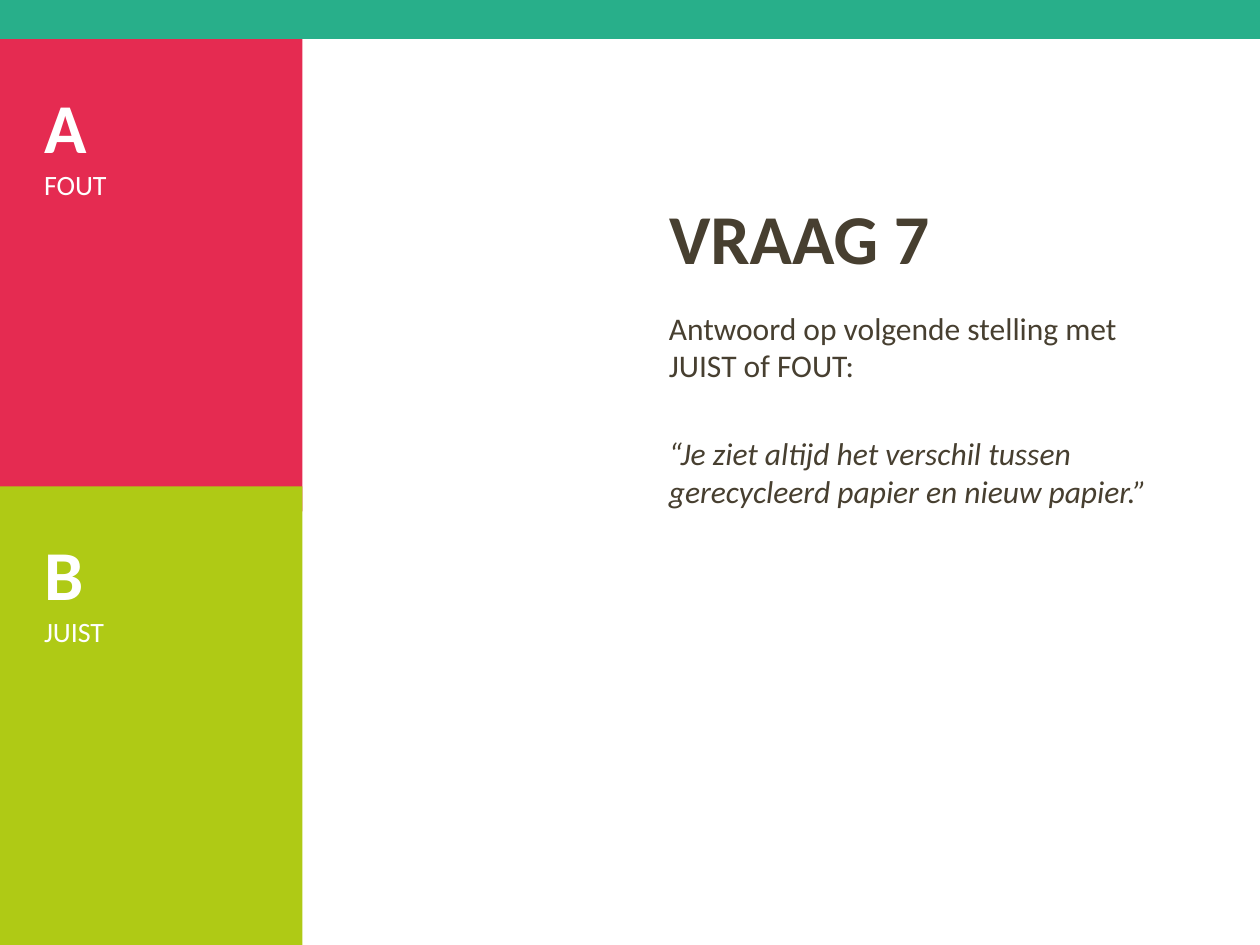
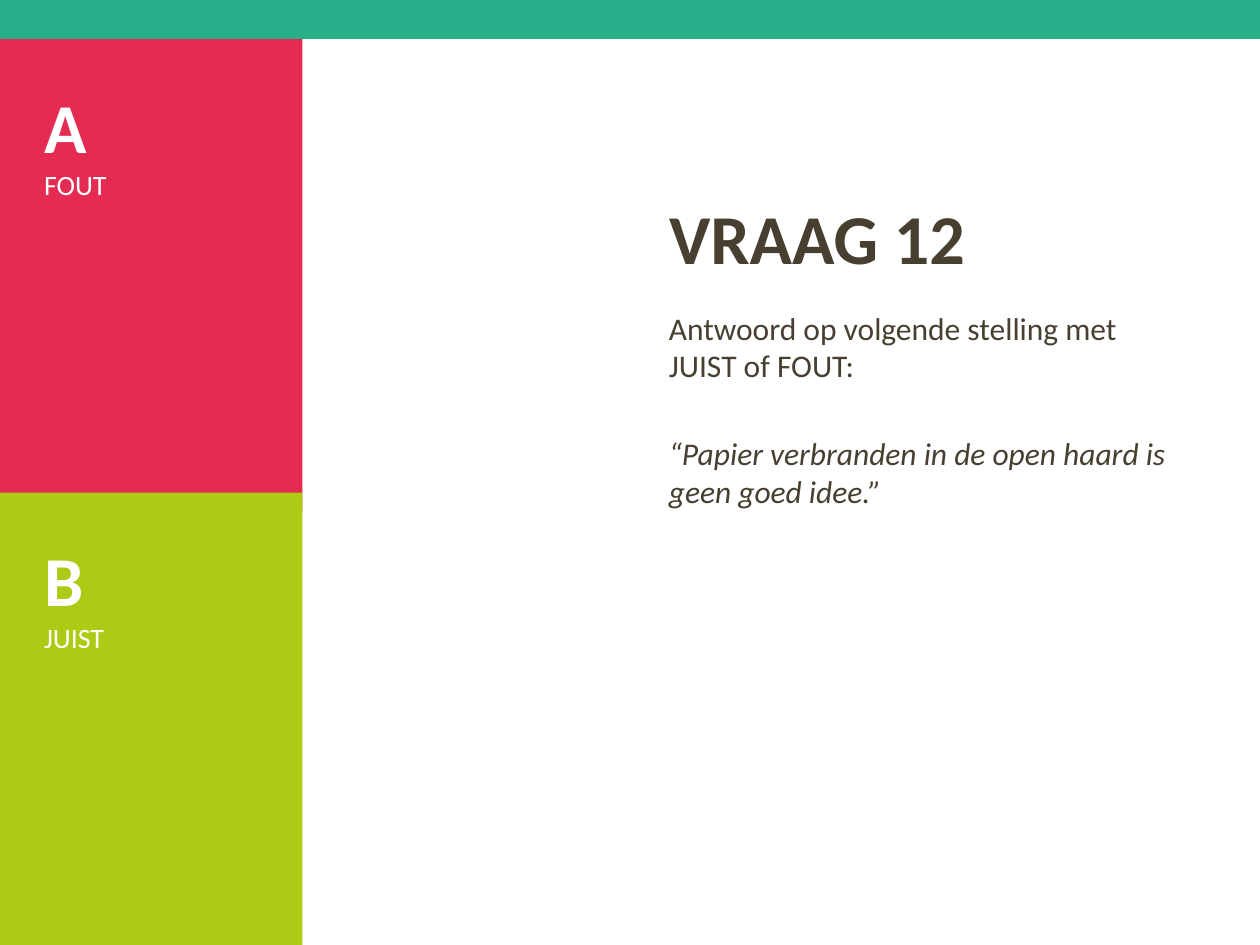
import pptx
import pptx.util
import pptx.dml.color
import pptx.enum.shapes
import pptx.enum.text

Inches = pptx.util.Inches
Pt = pptx.util.Pt

INSTRUCTION = "Antwoord op volgende stelling met JUIST of FOUT:"
QUESTIONS = [
    {
        "title": "VRAAG 7",
        "statement": "“Je ziet altijd het verschil tussen gerecycleerd papier en nieuw papier.”",
        "answer_b_top": 3.86,
    },
    {
        "title": "VRAAG 12",
        "statement": "“Papier verbranden in de open haard is geen goed idee.”",
        "answer_b_top": 3.91,
    },
]
ANSWER_A = ("A", "FOUT")
ANSWER_B = ("B", "JUIST")

COLOURS = {
    "band": "28AF8A",
    "wrong": "E52B51",
    "right": "AFCA15",
    "dark": "473F30",
    "white": "FFFFFF",
}
SLIDE_WIDTH, SLIDE_HEIGHT = 10, 7.5
BAND_WIDTH, BAND_HEIGHT = 10.03, 0.31
ANSWER_WIDTH, ANSWER_A_HEIGHT, ANSWER_INSET = 2.4, 3.75, 0.35
TEXT_LEFT, TEXT_WIDTH = 5.21, 4.28
TITLE_TOP, TITLE_HEIGHT = 1.31, 0.95
BODY_TOP, BODY_HEIGHT = 2.4, 2.49

HEADING = {"name": "Calibri", "size": Pt(40), "bold": True, "italic": False}
LABEL = {"name": "Calibri", "size": Pt(16), "bold": False, "italic": False}
BODY = {"name": "Calibri", "size": Pt(18), "bold": False, "italic": False}
QUOTE = {**BODY, "italic": True}
STATEMENT_GAP = Pt(28.4)


def colour(name):
    return pptx.dml.color.RGBColor.from_string(COLOURS[name])


def set_values(target, values):
    for name, value in values.items():
        setattr(target, name, value)


def write_paragraphs(text_frame, lines, colour_name):
    for index, (text, font_values) in enumerate(lines):
        paragraph = text_frame.paragraphs[0] if index == 0 else text_frame.add_paragraph()
        paragraph.alignment = pptx.enum.text.PP_ALIGN.LEFT
        run = paragraph.add_run()
        run.text = text
        set_values(run.font, font_values)
        run.font.color.rgb = colour(colour_name)


def add_block(slide, top, width, height, fill_name):
    shape = slide.shapes.add_shape(
        pptx.enum.shapes.MSO_SHAPE.RECTANGLE,
        Inches(0), Inches(top), Inches(width), Inches(height),
    )
    shape.shadow.inherit = False
    shape.fill.solid()
    shape.fill.fore_color.rgb = colour(fill_name)
    shape.line.fill.background()
    return shape


def add_answer(slide, top, height, fill_name, answer):
    shape = add_block(slide, top, ANSWER_WIDTH, height, fill_name)
    sides = ("left", "top", "right", "bottom")
    set_values(shape.text_frame, {f"margin_{side}": Inches(ANSWER_INSET) for side in sides})
    shape.text_frame.vertical_anchor = pptx.enum.text.MSO_ANCHOR.TOP
    letter, label = answer
    write_paragraphs(shape.text_frame, [(letter, HEADING), (label, LABEL)], "white")


def add_title(slide, text):
    title = slide.shapes.title
    set_values(title, {
        "left": Inches(TEXT_LEFT), "top": Inches(TITLE_TOP),
        "width": Inches(TEXT_WIDTH), "height": Inches(TITLE_HEIGHT),
    })
    title.text_frame.vertical_anchor = pptx.enum.text.MSO_ANCHOR.BOTTOM
    write_paragraphs(title.text_frame, [(text, HEADING)], "dark")


def add_statement(slide, statement):
    box = slide.shapes.add_textbox(
        Inches(TEXT_LEFT), Inches(BODY_TOP), Inches(TEXT_WIDTH), Inches(BODY_HEIGHT)
    )
    box.text_frame.word_wrap = True
    write_paragraphs(box.text_frame, [(INSTRUCTION, BODY), (statement, QUOTE)], "dark")
    box.text_frame.paragraphs[1].space_before = STATEMENT_GAP


def add_question(presentation, question):
    slide = presentation.slides.add_slide(presentation.slide_layouts.get_by_name("Title Only"))
    add_title(slide, question["title"])
    add_statement(slide, question["statement"])
    answer_b_top = question["answer_b_top"]
    add_answer(slide, BAND_HEIGHT, ANSWER_A_HEIGHT, "wrong", ANSWER_A)
    add_answer(slide, answer_b_top, SLIDE_HEIGHT - answer_b_top, "right", ANSWER_B)
    add_block(slide, 0, BAND_WIDTH, BAND_HEIGHT, "band")


def main():
    presentation = pptx.Presentation()
    presentation.slide_width = Inches(SLIDE_WIDTH)
    presentation.slide_height = Inches(SLIDE_HEIGHT)
    for question in QUESTIONS:
        add_question(presentation, question)
    presentation.save("out.pptx")


if __name__ == "__main__":
    main()
